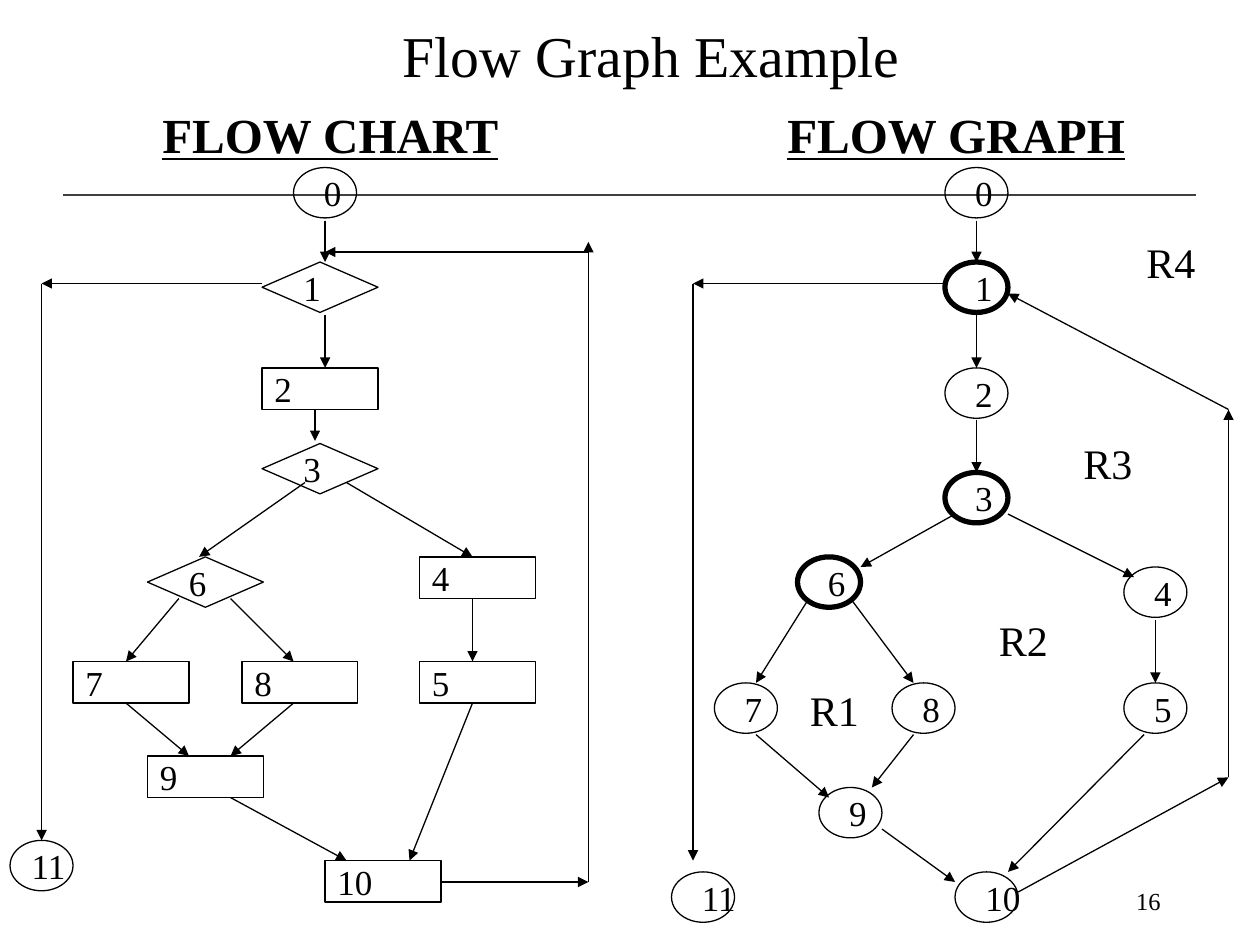
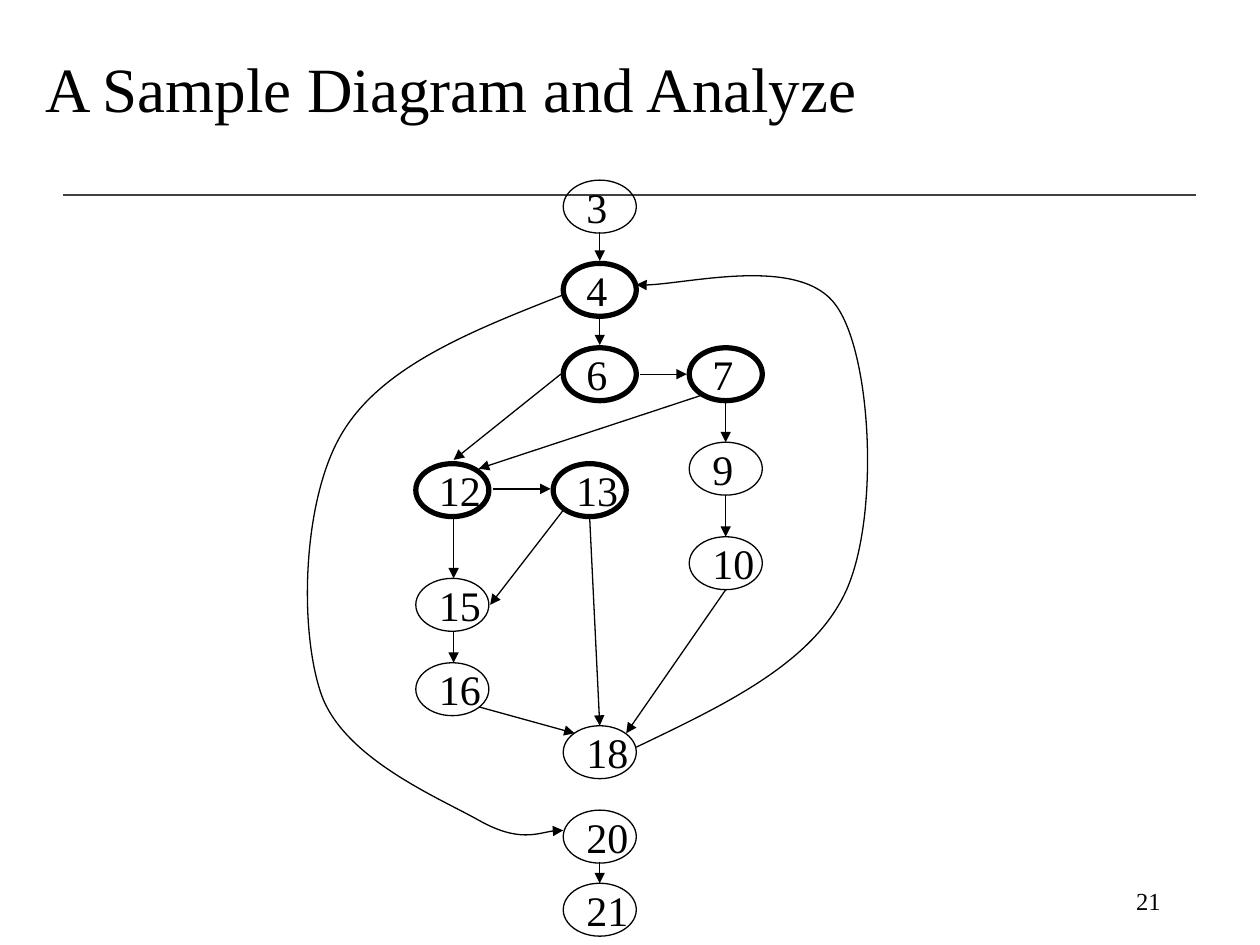
from dataclasses import dataclass
from typing import Any, NamedTuple

from pptx import Presentation
from pptx.dml.color import RGBColor
from pptx.enum.shapes import MSO_CONNECTOR, MSO_SHAPE
from pptx.enum.text import MSO_ANCHOR, MSO_AUTO_SIZE, PP_ALIGN
from pptx.oxml.ns import qn
from pptx.oxml.xmlchemy import OxmlElement
from pptx.util import Inches, Pt

FONT = "Times New Roman"
BLACK = "000000"
RULE_GRAY = "404040"
THIN, THICK = 0.75, 3

FIXED_FRAME = {"word_wrap": True, "vertical_anchor": MSO_ANCHOR.MIDDLE}
NODE_FRAME = {"word_wrap": False, "vertical_anchor": MSO_ANCHOR.MIDDLE}
LABEL_FRAME = {"word_wrap": False, "auto_size": MSO_AUTO_SIZE.SHAPE_TO_FIT_TEXT}
LEFT = {"alignment": PP_ALIGN.LEFT}
RIGHT = {"alignment": PP_ALIGN.RIGHT}
LEFT_TITLE = {"alignment": PP_ALIGN.LEFT, "line_spacing": 0.9}
CENTER_TITLE = {"alignment": PP_ALIGN.CENTER, "line_spacing": 0.9}
HEADING_FONT = {"size": Pt(28), "bold": True, "underline": True}


class Box(NamedTuple):
    left: float
    top: float
    width: float
    height: float


class Point(NamedTuple):
    x: float
    y: float


@dataclass(frozen=True)
class NodeKind:
    preset: MSO_SHAPE
    width: float
    height: float
    size: int


@dataclass(frozen=True)
class Node:
    text: str
    left: float
    top: float
    kind: NodeKind
    weight: float = THIN


@dataclass(frozen=True)
class Arrow:
    x1: float
    y1: float
    x2: float
    y2: float


@dataclass(frozen=True)
class Label:
    text: str
    box: Box
    font: dict[str, Any]


DECISION = NodeKind(MSO_SHAPE.FLOWCHART_DECISION, 0.92, 0.4, 20)
PROCESS = NodeKind(MSO_SHAPE.RECTANGLE, 0.92, 0.33, 20)
CIRCLE = NodeKind(MSO_SHAPE.OVAL, 0.5, 0.4, 20)
LARGE_CIRCLE = NodeKind(MSO_SHAPE.OVAL, 0.58, 0.42, 24)

CHART_NODES = [
    Node(" 0", 2.33, 1.33, CIRCLE),
    Node("1", 2.08, 2.08, DECISION),
    Node("2", 2.08, 2.92, PROCESS),
    Node("3", 2.08, 3.52, DECISION),
    Node("4", 3.33, 4.42, PROCESS),
    Node("5", 3.33, 5.25, PROCESS),
    Node("6", 1.17, 4.42, DECISION),
    Node("7", 0.58, 5.25, PROCESS),
    Node("8", 1.92, 5.25, PROCESS),
    Node("9", 1.17, 6, PROCESS),
    Node("10", 2.58, 6.83, PROCESS),
    Node("11", 0.08, 6.67, CIRCLE),
]
CHART_ARROWS = [
    Arrow(2.58, 1.75, 2.58, 2.08),
    Arrow(2.58, 2.5, 2.58, 2.92),
    Arrow(2.5, 3.25, 2.5, 3.5),
    Arrow(2.42, 3.83, 1.58, 4.42),
    Arrow(2.75, 3.83, 3.75, 4.42),
    Arrow(3.75, 4.75, 3.75, 5.25),
    Arrow(1.42, 4.75, 1, 5.25),
    Arrow(1.83, 4.75, 2.33, 5.25),
    Arrow(1, 5.58, 1.5, 6),
    Arrow(2.33, 5.58, 1.83, 6),
    Arrow(1.83, 6.33, 2.75, 6.83),
    Arrow(3.75, 5.58, 3.25, 6.83),
    Arrow(2.08, 2.25, 0.33, 2.25),
    Arrow(0.33, 2.25, 0.33, 6.67),
    Arrow(3.5, 7, 4.67, 7),
    Arrow(4.67, 7, 4.67, 1.92),
    Arrow(4.67, 2, 2.58, 2),
]
GRAPH_NODES = [
    Node(" 0", 7.5, 1.33, CIRCLE),
    Node(" 1", 7.5, 2.08, CIRCLE, THICK),
    Node(" 2", 7.5, 2.92, CIRCLE),
    Node(" 3", 7.5, 3.75, CIRCLE, THICK),
    Node(" 4", 8.92, 4.5, CIRCLE),
    Node(" 5", 8.92, 5.42, CIRCLE),
    Node(" 6", 6.33, 4.42, CIRCLE, THICK),
    Node(" 7", 5.67, 5.42, CIRCLE),
    Node(" 8", 7.08, 5.42, CIRCLE),
    Node(" 9", 6.5, 6.25, CIRCLE),
    Node(" 10", 7.58, 6.92, CIRCLE),
    Node(" 11", 5.33, 6.92, CIRCLE),
]
GRAPH_ARROWS = [
    Arrow(7.75, 1.75, 7.75, 2.08),
    Arrow(7.75, 2.5, 7.75, 2.92),
    Arrow(7.75, 3.33, 7.75, 3.75),
    Arrow(7.58, 4.08, 6.83, 4.5),
    Arrow(8, 4.08, 9, 4.58),
    Arrow(6.42, 4.75, 6, 5.42),
    Arrow(6.75, 4.75, 7.25, 5.42),
    Arrow(6, 5.83, 6.58, 6.33),
    Arrow(7.25, 5.83, 6.92, 6.25),
    Arrow(7, 6.58, 7.58, 7),
    Arrow(9.08, 5.83, 8, 6.92),
    Arrow(9.17, 4.92, 9.17, 5.42),
    Arrow(7.5, 2.25, 5.5, 2.25),
    Arrow(5.5, 2.25, 5.5, 6.83),
    Arrow(8.08, 7.08, 9.75, 6.17),
    Arrow(9.75, 6.17, 9.75, 3.25),
    Arrow(9.75, 3.25, 8, 2.33),
]
HEADINGS = [
    Label(text, Box(left, 0.78, 2.89, 0.57), HEADING_FONT)
    for text, left in [("FLOW CHART", 1.19), ("FLOW GRAPH", 6.15)]
]
REGIONS = [
    Label(f"R{number}", Box(left, top, 0.59, 0.5), {"size": Pt(24)})
    for number, (left, top) in enumerate(
        [(6.33, 5.38), (7.83, 4.83), (8.5, 3.42), (9, 1.83)], start=1)
]

SAMPLE_NODES = [
    Node("3", 4.47, 1.43, LARGE_CIRCLE),
    Node("4", 4.47, 2.09, LARGE_CIRCLE, THICK),
    Node("6", 4.47, 2.76, LARGE_CIRCLE, THICK),
    Node("7", 5.47, 2.76, LARGE_CIRCLE, THICK),
    Node("9", 5.47, 3.51, LARGE_CIRCLE),
    Node("10", 5.47, 4.26, LARGE_CIRCLE),
    Node("12", 3.3, 3.68, LARGE_CIRCLE, THICK),
    Node("13", 4.39, 3.68, LARGE_CIRCLE, THICK),
    Node("15", 3.3, 4.59, LARGE_CIRCLE),
    Node("16", 3.3, 5.26, LARGE_CIRCLE),
    Node("18", 4.47, 5.76, LARGE_CIRCLE),
    Node("20", 4.47, 6.43, LARGE_CIRCLE),
    Node("21", 4.47, 7.01, LARGE_CIRCLE),
]
SAMPLE_ARROWS = [
    Arrow(4.76, 1.84, 4.76, 2.07),
    Arrow(4.76, 2.53, 4.76, 2.74),
    Arrow(5.08, 2.97, 5.45, 2.97),
    Arrow(5.76, 3.2, 5.76, 3.51),
    Arrow(5.76, 3.93, 5.76, 4.26),
    Arrow(5.76, 4.68, 4.97, 5.82),
    Arrow(4.45, 2.97, 3.6, 3.65),
    Arrow(5.56, 3.14, 3.8, 3.72),
    Arrow(3.6, 4.11, 3.6, 4.59),
    Arrow(3.91, 3.88, 4.37, 3.88),
    Arrow(4.47, 4.05, 3.89, 4.8),
    Arrow(4.68, 4.11, 4.76, 5.76),
    Arrow(3.6, 5.01, 3.6, 5.26),
    Arrow(3.8, 5.61, 4.56, 5.82),
    Arrow(4.76, 6.84, 4.76, 7.01),
]
LOOP_BACK = [
    Point(5.05, 5.93),
    Point(5.76, 5.59), Point(6.46, 5.26), Point(6.72, 4.68),
    Point(6.98, 4.09), Point(6.92, 2.83), Point(6.64, 2.43),
    Point(6.36, 2.02), Point(5.32, 2.29), Point(5.05, 2.26),
]
LOOP_EXIT = [
    Point(4.47, 2.34),
    Point(3.76, 2.62), Point(3.04, 2.9), Point(2.72, 3.43),
    Point(2.4, 3.95), Point(2.37, 4.99), Point(2.55, 5.51),
    Point(2.73, 6.02), Point(3.48, 6.33), Point(3.8, 6.51),
    Point(4.12, 6.69), Point(4.36, 6.58), Point(4.47, 6.59),
]


def color(value: str) -> RGBColor:
    return RGBColor.from_string(value)


def apply_format(target: Any, values: dict[str, Any]) -> None:
    for name, value in values.items():
        setattr(target, name, value)


def write(shape: Any, text: str, font: dict[str, Any],
          frame: dict[str, Any], layout: dict[str, Any]) -> None:
    apply_format(shape.text_frame, frame)
    paragraph = shape.text_frame.paragraphs[0]
    apply_format(paragraph, layout)
    run = paragraph.add_run()
    run.text = text
    apply_format(run.font, {"name": FONT, **font})
    run.font.color.rgb = color(BLACK)


def add_text(slide: Any, text: str, box: Box, font: dict[str, Any],
             frame: dict[str, Any], layout: dict[str, Any]) -> None:
    shape = slide.shapes.add_textbox(*map(Inches, box))
    write(shape, text, font, frame, layout)


def set_line(shape: Any, weight: float, value: str = BLACK) -> None:
    shape.line.color.rgb = color(value)
    shape.line.width = Pt(weight)


def add_arrowhead(shape: Any) -> None:
    head = OxmlElement("a:tailEnd")
    head.set("type", "triangle")
    shape._element.spPr.find(qn("a:ln")).append(head)


def add_line(slide: Any, ends: Arrow, weight: float = THIN, value: str = BLACK) -> Any:
    connector = slide.shapes.add_connector(
        MSO_CONNECTOR.STRAIGHT,
        *map(Inches, (ends.x1, ends.y1, ends.x2, ends.y2)))
    set_line(connector, weight, value)
    connector._element.spPr.append(OxmlElement("a:effectLst"))
    return connector


def add_node(slide: Any, node: Node) -> None:
    kind = node.kind
    box = Box(node.left, node.top, kind.width, kind.height)
    shape = slide.shapes.add_shape(kind.preset, *map(Inches, box))
    shape.shadow.inherit = False
    shape.fill.background()
    set_line(shape, node.weight)
    write(shape, node.text, {"size": Pt(kind.size)}, NODE_FRAME, LEFT)


def add_curve(slide: Any, points: list[Point]) -> None:
    start, *controls = [(Inches(point.x), Inches(point.y)) for point in points]
    builder = slide.shapes.build_freeform(*start)
    builder.add_line_segments(controls, close=False)
    shape = builder.convert_to_shape()
    segments = list(shape._element.iter(qn("a:lnTo")))
    for index in range(0, len(segments), 3):
        curve = OxmlElement("a:cubicBezTo")
        segments[index].addprevious(curve)
        for segment in segments[index:index + 3]:
            curve.append(segment[0])
            segment.getparent().remove(segment)
    shape.shadow.inherit = False
    shape.fill.background()
    set_line(shape, THIN)
    add_arrowhead(shape)


def add_page(presentation: Any, title: str, box: Box, size: int,
             layout: dict[str, Any], number: int) -> Any:
    slide = presentation.slides.add_slide(presentation.slide_layouts[6])
    add_line(slide, Arrow(0.5, 1.55, 9.49, 1.55), 1, RULE_GRAY)
    add_text(slide, str(number), Box(7.06, 6.95, 2.25, 0.4),
             {"size": Pt(14)}, FIXED_FRAME, RIGHT)
    add_text(slide, title, box, {"size": Pt(size)}, FIXED_FRAME, layout)
    return slide


def add_diagram(slide: Any, nodes: list[Node], arrows: list[Arrow]) -> None:
    for node in nodes:
        add_node(slide, node)
    for arrow in arrows:
        add_arrowhead(add_line(slide, arrow))


def main() -> None:
    presentation = Presentation()
    apply_format(presentation, {"slide_width": Inches(10), "slide_height": Inches(7.5)})

    example = add_page(presentation, "Flow Graph Example",
                       Box(0.92, 0, 8.5, 0.94), 33, CENTER_TITLE, 16)
    add_diagram(example, CHART_NODES, CHART_ARROWS)
    add_diagram(example, GRAPH_NODES, GRAPH_ARROWS)
    for label in REGIONS + HEADINGS:
        add_text(example, label.text, label.box, label.font, LABEL_FRAME, LEFT)

    sample = add_page(presentation, "A Sample Diagram and Analyze",
                      Box(0.26, 0.32, 9.58, 0.83), 36, LEFT_TITLE, 21)
    add_diagram(sample, SAMPLE_NODES, SAMPLE_ARROWS)
    for points in (LOOP_BACK, LOOP_EXIT):
        add_curve(sample, points)

    presentation.save("out.pptx")


if __name__ == "__main__":
    main()
